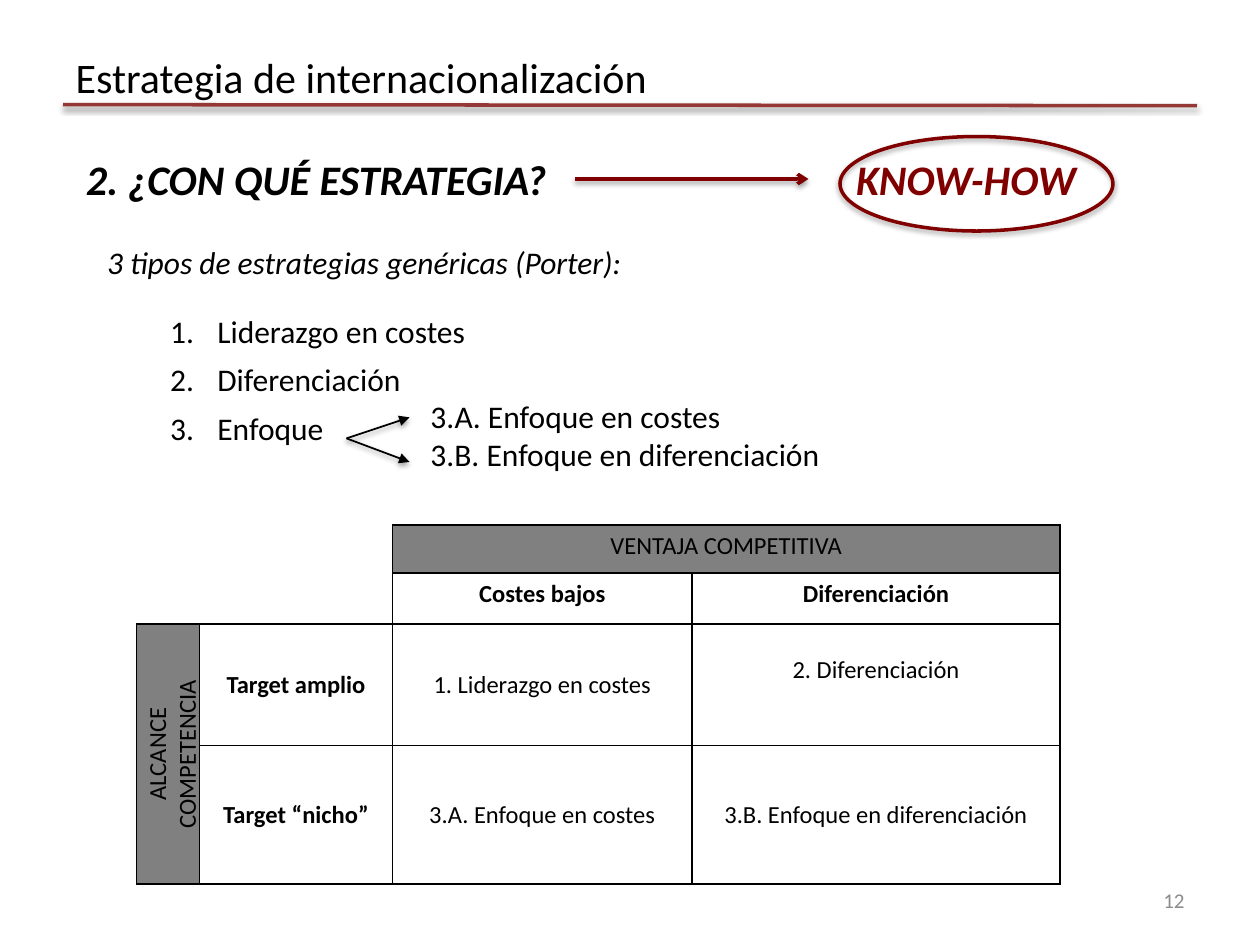
from dataclasses import dataclass

from lxml import etree
from pptx import Presentation
from pptx.dml.color import RGBColor
from pptx.enum.shapes import MSO_CONNECTOR, MSO_SHAPE
from pptx.enum.text import MSO_ANCHOR, MSO_AUTO_SIZE, PP_ALIGN
from pptx.oxml.ns import qn
from pptx.util import Pt

LEFT, CENTER, RIGHT = PP_ALIGN.LEFT, PP_ALIGN.CENTER, PP_ALIGN.RIGHT
TOP, MIDDLE = MSO_ANCHOR.TOP, MSO_ANCHOR.MIDDLE
NO_AUTOFIT = MSO_AUTO_SIZE.NONE
STRAIGHT = MSO_CONNECTOR.STRAIGHT
ELLIPSE = MSO_SHAPE.OVAL

FONT = "Calibri"
COLORS = {
    "black": "000000",
    "rule": "953735",
    "accent": "800000",
    "header": "808080",
    "number": "8C8C8C",
}


@dataclass
class Label:
    lines: list[str]
    left: float
    top: float
    width: float
    height: float
    size: float
    color: str = "black"
    strong: bool = False
    align: int = LEFT
    inset: bool = True


@dataclass
class Line:
    start: tuple[float, float]
    end: tuple[float, float]
    color: str
    weight: float
    head: str = ""


@dataclass
class Cell:
    row: int
    column: int
    text: str
    bold: bool = False
    fill: str = ""
    anchor: int = MIDDLE


LABELS = [
    Label(["12"], 516, 500, 168, 29, 12, "number", align=RIGHT),
    Label(["2. ¿CON QUÉ ESTRATEGIA?"], 42, 84, 287, 36, 24, strong=True),
    Label(["KNOW-HOW"], 447, 84, 210, 36, 24, "accent", True, CENTER),
    Label(["3.A. Enfoque en costes", "3.B. Enfoque en diferenciación"],
          246, 226.5, 234, 44, 18, inset=False),
]
FORK = (198, 250.5)
LINES = [
    Line((36, 59.8), (684, 60.4), "rule", 2),
    Line(FORK, (234, 238.5), "black", 1, "triangle"),
    Line(FORK, (234, 264), "black", 1, "triangle"),
    Line((328.5, 102.3), (462, 102.3), "accent", 2, "arrow"),
]
STRATEGIES = ["Liderazgo en costes", "Diferenciación", "Enfoque"]

COLUMN_WIDTHS = [36, 110.3, 171.2, 210.3]
ROW_HEIGHTS = [27.5, 27.5, 69.3, 79.2]
MERGES = [((0, 0), (1, 1)), ((0, 2), (0, 3)), ((2, 0), (3, 0))]
CELLS = [
    Cell(0, 2, "VENTAJA COMPETITIVA", fill="header", anchor=TOP),
    Cell(1, 2, "Costes bajos", True, anchor=TOP),
    Cell(1, 3, "Diferenciación", True, anchor=TOP),
    Cell(2, 0, "ALCANCE COMPETENCIA", fill="header", anchor=TOP),
    Cell(2, 1, "Target amplio", True),
    Cell(2, 2, "1. Liderazgo en costes"),
    Cell(2, 3, "2. Diferenciación"),
    Cell(3, 1, "Target “nicho”", True),
    Cell(3, 2, "3.A. Enfoque en costes"),
    Cell(3, 3, "3.B. Enfoque en diferenciación"),
]


def rgb(name: str) -> RGBColor:
    return RGBColor.from_string(COLORS[name])


def set_font(para, size: float, color: str = "black", bold: bool = False, italic: bool = False) -> None:
    font = para.font
    font.name, font.size = FONT, Pt(size)
    font.bold, font.italic = bold, italic
    font.color.rgb = rgb(color)


def add_node(parent, tag: str, **attributes):
    return etree.SubElement(parent, qn(tag), {key: str(value) for key, value in attributes.items()})


def add_shadow(shape, opacity: int) -> None:
    effects = add_node(shape._element.spPr, "a:effectLst")
    shadow = add_node(effects, "a:outerShdw", blurRad=Pt(3.1), dist=Pt(1.6),
                      dir=5400000, rotWithShape=0)
    color = add_node(shadow, "a:srgbClr", val=COLORS["black"])
    add_node(color, "a:alpha", val=opacity * 1000)


def add_label(page, label: Label) -> None:
    box = page.shapes.add_textbox(Pt(label.left), Pt(label.top), Pt(label.width), Pt(label.height))
    frame = box.text_frame
    frame.word_wrap = True
    frame.vertical_anchor = MIDDLE
    if not label.inset:
        frame.margin_left = frame.margin_right = frame.margin_top = frame.margin_bottom = 0
    frame.text = "\n".join(label.lines)
    for para in frame.paragraphs:
        para.alignment = label.align
        set_font(para, label.size, label.color, label.strong, label.strong)


def add_line(page, line: Line) -> None:
    connector = page.shapes.add_connector(STRAIGHT, *map(Pt, line.start + line.end))
    connector.line.color.rgb = rgb(line.color)
    connector.line.width = Pt(line.weight)
    if line.head:
        add_node(connector.line._get_or_add_ln(), "a:tailEnd", type=line.head)
    add_shadow(connector, 38)


def fill_title(title) -> None:
    title.left, title.top, title.width, title.height = Pt(36), Pt(21.6), Pt(648), Pt(44.6)
    frame = title.text_frame
    frame.auto_size, frame.vertical_anchor = NO_AUTOFIT, MIDDLE
    frame.text = "Estrategia de internacionalización"
    para = frame.paragraphs[0]
    para.alignment = LEFT
    set_font(para, 24)


def fill_list(body) -> None:
    body.left, body.top, body.width, body.height = Pt(54), Pt(131.5), Pt(474), Pt(136)
    frame = body.text_frame
    frame.auto_size, frame.vertical_anchor = NO_AUTOFIT, TOP
    frame.margin_top, frame.margin_bottom = Pt(7.2), 0
    frame.text = "\n".join(["3 tipos de estrategias genéricas (Porter):", *STRATEGIES])
    for index, para in enumerate(frame.paragraphs):
        numbered = index > 0
        para.level = int(numbered)
        para.space_before, para.space_after = Pt(0), Pt(6 if numbered else 18)
        set_font(para, 18, italic=not numbered)
        properties = para._p.get_or_add_pPr()
        properties.set("marL", str(Pt(63 if numbered else 0)))
        properties.set("indent", str(Pt(-27 if numbered else 0)))
        bullet = etree.Element(qn("a:buAutoNum" if numbered else "a:buNone"))
        if numbered:
            bullet.set("type", "arabicPeriod")
        properties.find(qn("a:defRPr")).addprevious(bullet)


def set_borders(cell, sides: str) -> None:
    properties = cell._tc.get_or_add_tcPr()
    for side in "LRTB":
        border = add_node(properties, f"a:ln{side}", w=Pt(1))
        if side in sides:
            paint = add_node(border, "a:solidFill")
            add_node(paint, "a:srgbClr", val=COLORS["black"])
        else:
            add_node(border, "a:noFill")


def add_matrix(page) -> None:
    table = page.shapes.add_table(4, 4, Pt(78), Pt(300), Pt(sum(COLUMN_WIDTHS)), Pt(sum(ROW_HEIGHTS))).table
    table.first_row = table.horz_banding = False
    for column, width in zip(table.columns, COLUMN_WIDTHS):
        column.width = Pt(width)
    for row, height in zip(table.rows, ROW_HEIGHTS):
        row.height = Pt(height)
    for first, last in MERGES:
        table.cell(*first).merge(table.cell(*last))
    for row in range(4):
        for column in range(4):
            cell = table.cell(row, column)
            set_borders(cell, "RB" if row < 2 and column < 2 else "LRTB")
            cell.fill.background()
    for item in CELLS:
        cell = table.cell(item.row, item.column)
        cell.text = item.text
        cell.vertical_anchor = item.anchor
        para = cell.text_frame.paragraphs[0]
        para.alignment = CENTER
        set_font(para, 14, bold=item.bold)
        if item.fill:
            cell.fill.solid()
            cell.fill.fore_color.rgb = rgb(item.fill)
    table.cell(2, 0)._tc.get_or_add_tcPr().set("vert", "vert270")
    table.cell(2, 3).margin_bottom = Pt(21)


def add_ellipse(page) -> None:
    ellipse = page.shapes.add_shape(ELLIPSE, Pt(480), Pt(78), Pt(156), Pt(54))
    ellipse.fill.background()
    ellipse.line.color.rgb = rgb("accent")
    ellipse.line.width = Pt(2)
    add_shadow(ellipse, 35)


def main() -> None:
    deck = Presentation()
    deck.slide_width, deck.slide_height = Pt(720), Pt(540)
    page = deck.slides.add_slide(deck.slide_layouts[1])
    fill_title(page.shapes.title)
    fill_list(page.placeholders[1])
    add_matrix(page)
    for label in LABELS:
        add_label(page, label)
    add_ellipse(page)
    for line in LINES:
        add_line(page, line)
    deck.save("out.pptx")


if __name__ == "__main__":
    main()
